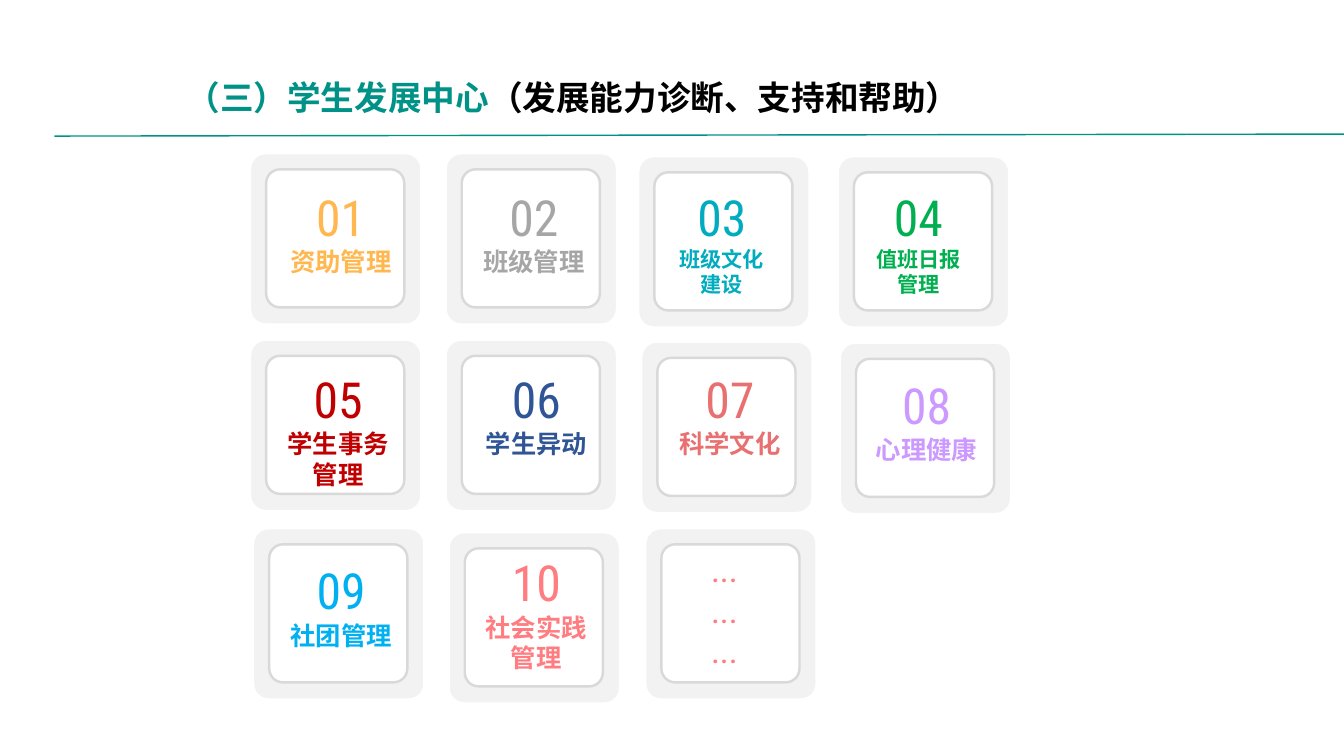
from pptx import Presentation
from pptx import util as u
from pptx.dml.color import RGBColor
from pptx.enum import shapes, text
from pptx.oxml import parse_xml
from pptx.oxml.ns import nsdecls, qn
from lxml import etree

SCALE = 9144
HAN = "Noto Sans CJK SC"
ROBOTO = "Roboto Condensed"

TEAL = RGBColor(0x00, 0x92, 0x87)
BLACK = RGBColor(0x00, 0x00, 0x00)
WHITE = RGBColor(0xFF, 0xFF, 0xFF)
PALE = RGBColor(0xF2, 0xF2, 0xF2)
RIM = RGBColor(0xD9, 0xD9, 0xD9)
AMBER = RGBColor(0xFF, 0xB8, 0x50)
GRAY = RGBColor(0xA6, 0xA6, 0xA6)
CYAN = RGBColor(0x01, 0xAC, 0xBE)
GREEN = RGBColor(0x00, 0xB0, 0x50)
RED = RGBColor(0xC0, 0x00, 0x00)
NAVY = RGBColor(0x2F, 0x55, 0x97)
CORAL = RGBColor(0xE8, 0x70, 0x71)
LILAC = RGBColor(0xCC, 0x99, 0xFF)
SKY = RGBColor(0x00, 0xB0, 0xF0)
PINK = RGBColor(0xFF, 0x7C, 0x80)

CARDS = [
    ((248, 152), (275, 180, 126, 100), "01", ["资助管理"], 18.1, AMBER),
    ((442, 152), (469, 180, 121, 161), "02", ["班级管理"], 18.1, GRAY),
    ((633, 155), (656, 180, 120, 120), "03", ["班级文化", "建设"], 15.1, CYAN),
    ((831, 155), (851, 180, 120, 120), "04", ["值班日报", "管理"], 15.1, GREEN),
    ((248, 337), (270, 361, 131, 130), "05", ["学生事务管理"], 18.1, RED),
    ((442, 337), (469, 361, 126, 100), "06", ["学生异动"], 18, NAVY),
    ((636, 339), (663, 361, 122, 100), "07", ["科学文化"], 18.1, CORAL),
    ((833, 340), (854, 367, 130, 100), "08", ["心理健康"], 18.1, LILAC),
    ((251, 524), (276, 551, 125, 100), "09", ["社团管理"], 18.1, SKY),
    ((445, 528), (470, 543, 124, 130), "10", ["社会实践管理"], 18.1, PINK),
]


def px(n):
    """Turn px into EMU."""
    return u.Emu(n * SCALE)


def run(words, size=18, color=BLACK, face=HAN, bold=False):
    """Return text together with its format."""
    return words, size, color, face, bold


class Deck:
    """Holds the style and the current slide."""

    def __init__(self, wide, high):
        """Open a blank slide of the given size."""
        self.prs = Presentation()
        self.prs.slide_width, self.prs.slide_height = px(wide), px(high)
        self.page = self.prs.slides.add_slide(self.prs.slide_layouts[6])
        self.edge = u.Pt(1.75)

    def label(self, box, paras, align=None, lead=None, pad=(10, 5)):
        """Add a text box with one list of runs per paragraph."""
        frame = self.page.shapes.add_textbox(*map(px, box)).text_frame
        frame.word_wrap = True
        frame.auto_size = text.MSO_AUTO_SIZE.SHAPE_TO_FIT_TEXT
        frame.margin_left = frame.margin_right = px(pad[0])
        frame.margin_top = frame.margin_bottom = px(pad[1])
        for i, runs in enumerate(paras):
            para = frame.add_paragraph() if i else frame.paragraphs[0]
            para.alignment, para.line_spacing = align, lead
            for words, size, color, face, bold in runs:
                part = para.add_run()
                part.text = words
                font = part.font
                font.size, font.bold, font.name = u.Pt(size), bold, face
                font.color.rgb = color
                east = etree.SubElement(part._r.get_or_add_rPr(), qn("a:ea"))
                east.set("typeface", face)

    def plate(self, left, top, side, curve, fill, line):
        """Add a rounded square."""
        box = map(px, (left, top, side, side))
        form = self.page.shapes.add_shape(shapes.MSO_SHAPE.ROUNDED_RECTANGLE, *box)
        form.shadow.inherit = False
        form.adjustments[0] = curve
        form.fill.solid()
        form.fill.fore_color.rgb = fill
        form.line.color.rgb = line
        form.line.width = self.edge

    def card(self, left, top):
        """Add a pale plate with a white face inset in it."""
        self.plate(left, top, 170, 0.09, PALE, WHITE)
        self.plate(left + 16, top + 16, 137, 0.1, WHITE, RIM)

    def rule(self, x1, y1, x2, y2, color):
        """Add a thin straight line."""
        line = self.page.shapes.add_connector(
            shapes.MSO_CONNECTOR.STRAIGHT, *map(px, (x1, y1, x2, y2)))
        line.line.color.rgb = color
        line.line.width = u.Pt(1)
        line._element.spPr.append(parse_xml(f"<a:effectLst {nsdecls('a')}/>"))


def main():
    """Build the slide and save it."""
    deck = Deck(1333, 750)
    mid = text.PP_ALIGN.CENTER
    title = [run("（三）学生发展中心", size=24, color=TEAL, bold=True),
             run("（发展能力诊断、支持和帮助）", size=24, bold=True)]
    deck.label((167, 47, 1031, 78), [title], lead=1.5, pad=(18, 9))
    deck.rule(54, 135, 1333, 133, TEAL)

    for spot, box, num, names, size, color in CARDS:
        deck.card(*spot)
        paras = [[run(num, size=35.5, color=color, face=ROBOTO)]]
        paras += [[run(name, size=size, color=color, bold=True)] for name in names]
        deck.label(box, paras, align=mid)

    deck.card(640, 524)
    dots = [run("...", size=24, color=PINK, face=ROBOTO)]
    deck.label((671, 540, 95, 130), [dots] * 3, align=mid)
    deck.prs.save("out.pptx")


if __name__ == "__main__":
    main()
